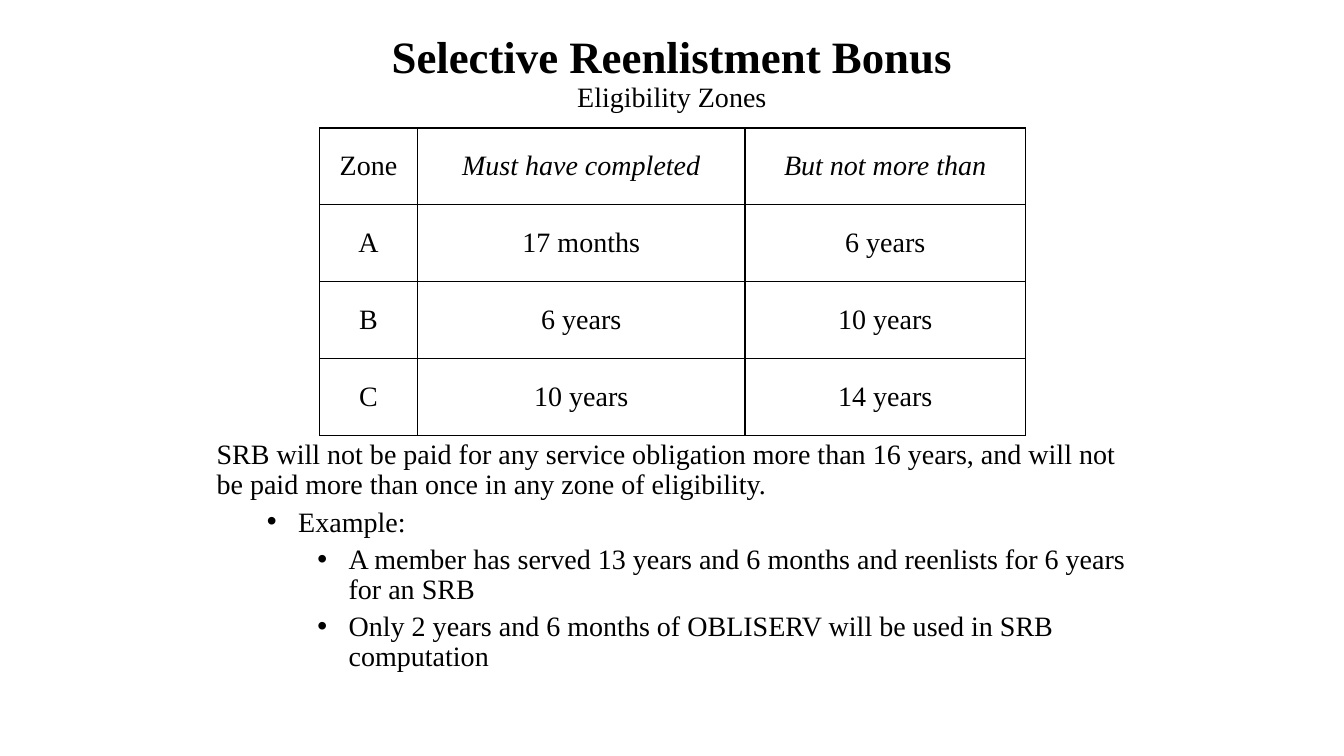
from pptx import Presentation
from pptx.dml.color import RGBColor
from pptx.enum.text import MSO_ANCHOR, PP_ALIGN
from pptx.oxml.ns import qn
from pptx.util import Inches, Pt
from lxml import etree

MIDDLE = MSO_ANCHOR.MIDDLE
CENTER = PP_ALIGN.CENTER
BLACK = "000000"


def add_run(p, text, size=20, color=BLACK, **formats):
    r = p.add_run()
    r.text = text
    r.font.color.rgb = RGBColor.from_string(color)
    for name, value in {"name": "Times New Roman", "size": Pt(size), **formats}.items():
        setattr(r.font, name, value)


def add_border(cell, side, color=BLACK, width=1):
    ln = etree.SubElement(cell._tc.get_or_add_tcPr(), qn("a:" + side), w=str(Pt(width)))
    fill = etree.SubElement(ln, qn("a:solidFill"))
    etree.SubElement(fill, qn("a:srgbClr"), val=color)


prs = Presentation()
prs.slide_width, prs.slide_height = Inches(13.33), Inches(7.5)
s = prs.slides.add_slide(prs.slide_layouts[6])

# Eligibility table
rows = [
    ("Zone", "Must have completed", "But not more than"),
    ("A", "17 months", "6 years"),
    ("B", "6 years", "10 years"),
    ("C", "10 years", "14 years"),
]
table = s.shapes.add_table(4, 3, Inches(3.17), Inches(1.27), Inches(7), Inches(3.05)).table
table.first_row = table.horz_banding = False
for column, width in zip(table.columns, (0.97, 3.25, 2.78)):
    column.width = Inches(width)
for i, row in enumerate(rows):
    for j, text in enumerate(row):
        cell = table.cell(i, j)
        cell.vertical_anchor = MIDDLE
        for side in ("lnL", "lnR", "lnT", "lnB"):
            add_border(cell, side)
        cell.fill.background()
        p = cell.text_frame.paragraphs[0]
        p.alignment = CENTER
        add_run(p, text, italic=(i == 0 and j > 0))

# Title and subtitle
tf = s.shapes.add_textbox(0, 0, prs.slide_width, Inches(1.47)).text_frame
tf.word_wrap = True
tf.vertical_anchor = MIDDLE
p = tf.paragraphs[0]
p.alignment, p.line_spacing = CENTER, 0.9
add_run(p, "Selective Reenlistment Bonus", 32, bold=True)
p.add_line_break()
add_run(p, "Eligibility Zones")

# Payment limits with the worked example
notes = [
    (0, "SRB will not be paid for any service obligation more than 16 years, "
        "and will not be paid more than once in any zone of eligibility."),
    (1, "Example:"),
    (2, "A member has served 13 years and 6 months and reenlists for 6 years for an SRB"),
    (2, "Only 2 years and 6 months of OBLISERV will be used in SRB computation"),
]
tf = s.shapes.add_textbox(Inches(2.05), Inches(4.32), Inches(9.23), Inches(2.43)).text_frame
tf.word_wrap = True
for i, (level, text) in enumerate(notes):
    p = tf.add_paragraph() if i else tf.paragraphs[0]
    p.level, p.line_spacing = level, 0.9
    if level:
        p.space_before = Pt(5)
        pPr = p._p.get_or_add_pPr()
        pPr.set("marL", str(Inches(0.31 + 0.5 * level)))
        pPr.set("indent", str(Inches(-0.31)))
        etree.SubElement(pPr, qn("a:buFont"), typeface="Arial")
        etree.SubElement(pPr, qn("a:buChar"), char="•")
    add_run(p, text)

prs.save("out.pptx")
